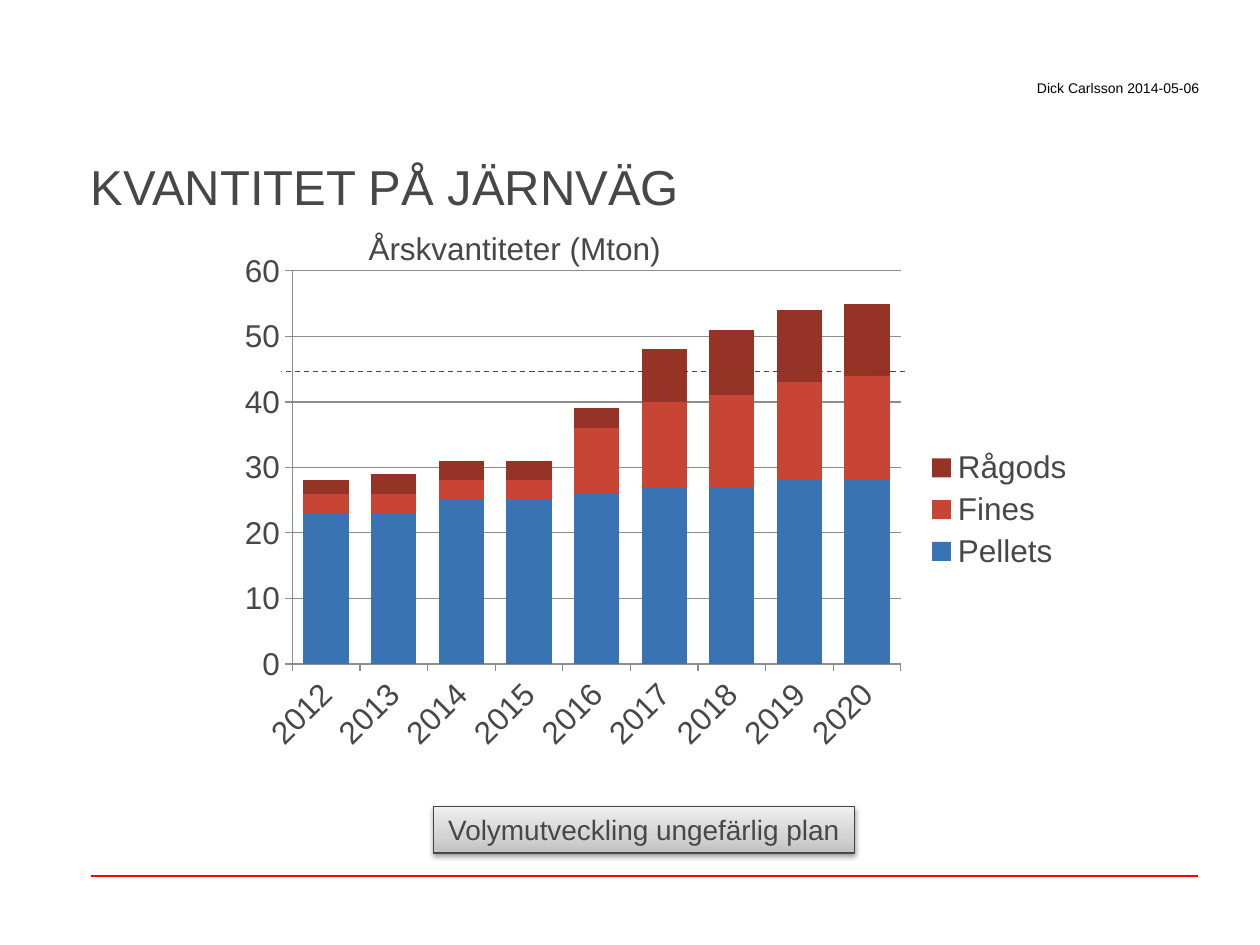
import pptx
import pptx.chart.data
import pptx.dml.color
import pptx.enum.chart
import pptx.enum.dml
import pptx.enum.shapes
import pptx.enum.text
import pptx.oxml
import pptx.oxml.ns
import pptx.util
from pptx.util import Inches

COLORS = {
    "text": "474747", "black": "000000", "rule": "FF0000", "grid": "8C8C8C",
    "border": "454545", "dark": "C1C1C1", "middle": "D3D3D3", "light": "EFEFEF",
    "Pellets": "3A73B3", "Fines": "C84434", "Rågods": "963327",
}
YEARS = [str(year) for year in range(2012, 2021)]
VOLUMES = {
    "Pellets": [23, 23, 25, 25, 26, 27, 27, 28, 28],
    "Fines": [3, 3, 3, 3, 10, 13, 14, 15, 16],
    "Rågods": [2, 3, 3, 3, 3, 8, 10, 11, 11],
}
ALIGN = pptx.enum.text.PP_ALIGN
ANCHOR = pptx.enum.text.MSO_ANCHOR
NAMESPACE = pptx.oxml.ns.nsdecls("a")


def rgb(name):
    """Return the named colour."""
    return pptx.dml.color.RGBColor.from_string(COLORS[name])


def style_font(font, size, color="text"):
    """Set face, size, weight and colour of a font."""
    font.name = "Arial"
    font.size = pptx.util.Pt(size)
    font.bold = False
    font.color.rgb = rgb(color)


def write_text(shape, text, size, color="text", align=ALIGN.LEFT, anchor=ANCHOR.MIDDLE, wrap=True):
    """Fill a shape with one formatted line without margins."""
    frame = shape.text_frame
    frame.word_wrap = wrap
    frame.vertical_anchor = anchor
    frame.margin_left = frame.margin_right = frame.margin_top = frame.margin_bottom = 0
    para = frame.paragraphs[0]
    para.alignment = align
    span = para.add_run()
    span.text = text
    style_font(span.font, size, color)


def add_line(page, start, end, color, width, dash=None):
    """Draw a straight line without a shadow."""
    line = page.shapes.add_connector(
        pptx.enum.shapes.MSO_CONNECTOR.STRAIGHT, *map(Inches, start + end))
    line.line.color.rgb = rgb(color)
    line.line.width = pptx.util.Pt(width)
    if dash:
        line.line.dash_style = dash
    line._element.spPr.append(pptx.oxml.parse_xml(f"<a:effectLst {NAMESPACE}/>"))


def add_header(page, left, top, width, height):
    """Place the author line above the slide title."""
    title = page.shapes.add_textbox(*map(Inches, (left, top + 0.19, width, height - 0.19)))
    write_text(title, "KVANTITET PÅ JÄRNVÄG", 28, anchor=ANCHOR.BOTTOM)
    author = page.shapes.add_textbox(*map(Inches, (left + width - 3.15, top, 3.15, 0.12)))
    write_text(author, "Dick Carlsson 2014-05-06", 8, "black", ALIGN.RIGHT)


def layout_xml(outer, left, top, size=None):
    """Return a manual layout, in inches, inside a chart of the outer size."""
    places = {"x": left / outer[0], "y": top / outer[1]}
    if size:
        places.update(w=size[0] / outer[0], h=size[1] / outer[1])
    target = '<c:layoutTarget val="inner"/>' if size else ""
    values = "".join(f'<c:{tag} val="{value:.4f}"/>' for tag, value in places.items())
    return pptx.oxml.parse_xml(
        f'<c:layout {pptx.oxml.ns.nsdecls("c")}><c:manualLayout>{target}'
        f'<c:xMode val="edge"/><c:yMode val="edge"/>{values}</c:manualLayout></c:layout>')


def add_volume_chart(page, left, top, width, height):
    """Place the stacked yearly volumes and the dashed capacity line."""
    data = pptx.chart.data.CategoryChartData(number_format="0")
    data.categories = YEARS
    for name, values in VOLUMES.items():
        data.add_series(name, values)
    chart = page.shapes.add_chart(
        pptx.enum.chart.XL_CHART_TYPE.COLUMN_STACKED,
        *map(Inches, (left, top, width, height)), data).chart
    style_font(chart.font, 18)

    chart.has_title = True
    frame = chart.chart_title.text_frame
    frame.text = "Årskvantiteter (Mton)"
    style_font(frame.paragraphs[0].runs[0].font, 18)
    title = chart.chart_title._element
    area = chart._chartSpace.chart.plotArea
    for part in (title, area):
        for old in part.findall(pptx.oxml.ns.qn("c:layout")):
            part.remove(old)
    title.find(pptx.oxml.ns.qn("c:tx")).addnext(layout_xml((width, height), 1.17, 0.03))
    title.find(pptx.oxml.ns.qn("c:overlay")).set("val", "1")
    area.insert(0, layout_xml((width, height), 0.61, 0.42, (4.83, 3.12)))

    plot = chart.plots[0]
    plot.gap_width, plot.overlap, plot.vary_by_categories = 49, 100, False
    for series in plot.series:
        series.format.fill.solid()
        series.format.fill.fore_color.rgb = rgb(series.name)

    years, volumes = chart.category_axis, chart.value_axis
    volumes.minimum_scale, volumes.maximum_scale, volumes.major_unit = 0, 60, 10
    volumes.has_major_gridlines = True
    for part in (years, volumes, volumes.major_gridlines):
        part.format.line.color.rgb = rgb("grid")
        part.format.line.width = pptx.util.Pt(0.75)
    for axis in (years, volumes):
        axis.major_tick_mark = pptx.enum.chart.XL_TICK_MARK.OUTSIDE
        style_font(axis.tick_labels.font, 18)
    years._element.find(".//" + pptx.oxml.ns.qn("a:bodyPr")).set("rot", "-2700000")

    chart.has_legend = True
    chart.legend.position = pptx.enum.chart.XL_LEGEND_POSITION.RIGHT
    chart.legend.include_in_layout = False
    style_font(chart.legend.font, 18)

    add_line(page, (left + 5.47, top + 1.22), (left + 0.52, top + 1.22),
             "text", 0.75, pptx.enum.dml.MSO_LINE.DASH)


def add_caption(page, left, top, width, height):
    """Place the shaded caption with its soft shadow."""
    caption = page.shapes.add_shape(
        pptx.enum.shapes.MSO_SHAPE.RECTANGLE, *map(Inches, (left, top, width, height)))
    caption.shadow.inherit = False
    caption.line.color.rgb = rgb("border")
    caption.line.width = pptx.util.Pt(0.75)
    stops = "".join(
        f'<a:gs pos="{place * 1000}"><a:srgbClr val="{COLORS[name]}"/></a:gs>'
        for place, name in ((0, "dark"), (35, "middle"), (100, "light")))
    properties = caption._element.spPr
    properties.find(pptx.oxml.ns.qn("a:prstGeom")).addnext(pptx.oxml.parse_xml(
        f'<a:gradFill {NAMESPACE} rotWithShape="1"><a:gsLst>{stops}</a:gsLst>'
        '<a:lin ang="16200000" scaled="0"/></a:gradFill>'))
    blur, distance = pptx.util.Pt(3.1), pptx.util.Pt(1.6)
    properties.find(pptx.oxml.ns.qn("a:effectLst")).append(pptx.oxml.parse_xml(
        f'<a:outerShdw {NAMESPACE} blurRad="{blur}" dist="{distance}" dir="5400000" '
        f'rotWithShape="0"><a:srgbClr val="{COLORS["black"]}"><a:alpha val="38000"/>'
        '</a:srgbClr></a:outerShdw>'))
    write_text(caption, "Volymutveckling ungefärlig plan", 16, align=ALIGN.CENTER, wrap=False)


def main():
    """Build and save the slide."""
    deck = pptx.Presentation()
    deck.slide_width, deck.slide_height = Inches(10), Inches(7.5)
    page = deck.slides.add_slide(deck.slide_layouts[6])
    add_line(page, (0.72, 6.95), (9.51, 6.95), "rule", 1)
    add_header(page, 0.72, 0.64, 8.8, 1.07)
    add_volume_chart(page, 1.71, 1.73, 6.92, 4.63)
    add_caption(page, 3.44, 6.4, 3.34, 0.37)
    deck.save("out.pptx")


if __name__ == "__main__":
    main()
